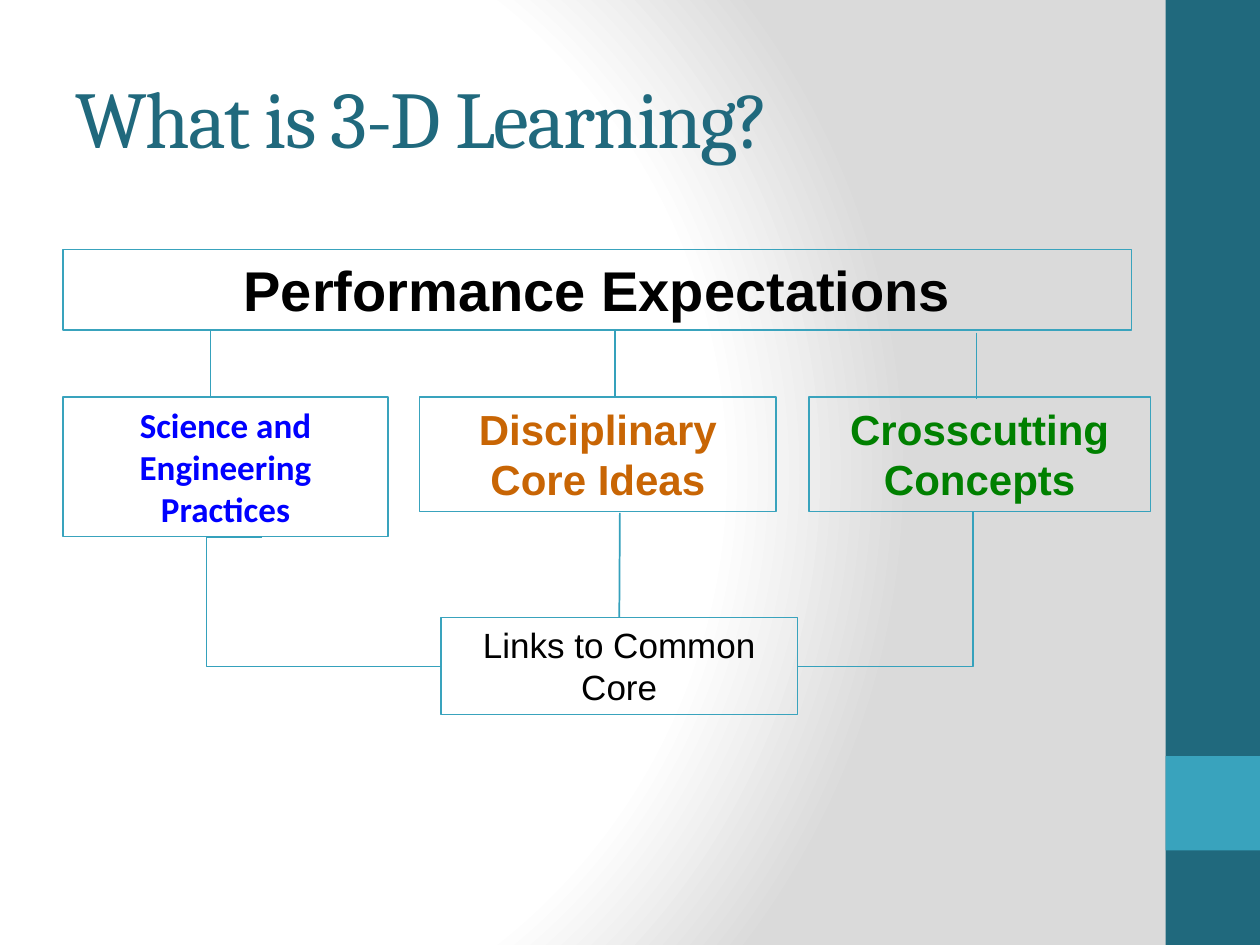
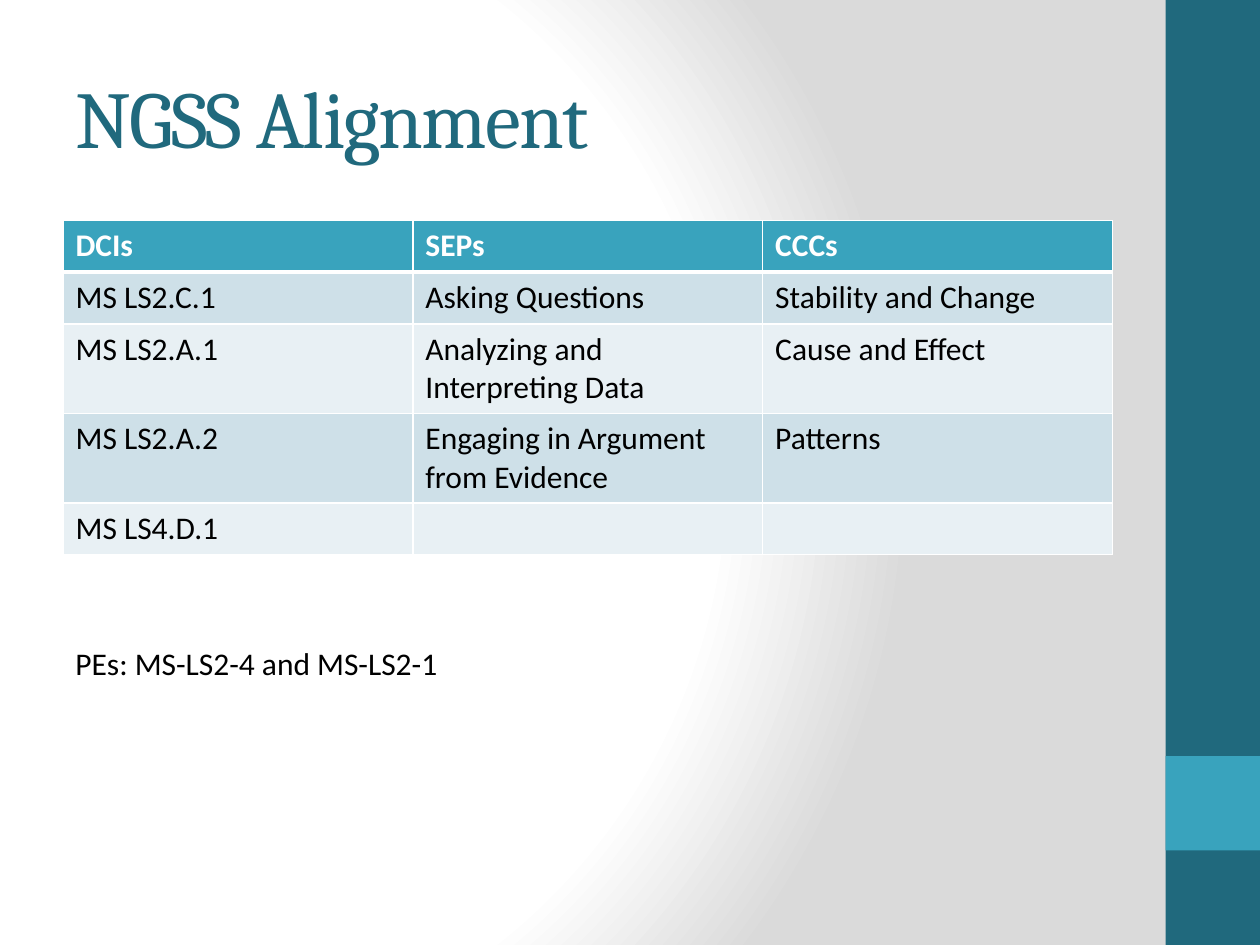
from lxml import etree
from pptx import Presentation
from pptx.dml.color import RGBColor
from pptx.enum.shapes import MSO_CONNECTOR, MSO_SHAPE
from pptx.enum.text import MSO_ANCHOR, PP_ALIGN
from pptx.oxml import parse_xml
from pptx.oxml.ns import nsdecls, qn
from pptx.util import Inches, Pt

COLORS = {
    "dark_teal": "20697D", "teal": "39A3BD", "connector": "35A1BC",
    "white": "FFFFFF", "gray": "DADADA", "black": "000000",
    "blue": "0000FF", "orange": "C86504", "green": "008000",
    "row_dark": "CEE0E8", "row_light": "E8F0F4",
}
SIDE_BANDS = [  # left, top, width, height, color
    (9.25, 0, 0.75, 7.5, "dark_teal"),
    (9.25, 6, 0.75, 0.75, "teal"),
]
TITLE_BOX = (0.5, 0.3, 8.33, 1.25)
TITLE_FORMAT = {"name": "Cambria", "size": 46, "color": "dark_teal", "bold": False}
BODY_FORMAT = {"name": "Calibri", "size": 18, "color": "black", "bold": False}
HEADER_FORMAT = {**BODY_FORMAT, "color": "white", "bold": True}

DIAGRAM_TITLE = "What is 3-D Learning?"
DIAGRAM_BOXES = {  # text: (box, format)
    "Performance Expectations": (
        (0.5, 1.98, 8.48, 0.64),
        {"name": "Arial", "size": 32, "color": "black", "bold": True}),
    "Science and Engineering Practices": (
        (0.5, 3.15, 2.58, 1.11),
        {"name": "Calibri", "size": 20, "color": "blue", "bold": True}),
    "Disciplinary Core Ideas": (
        (3.33, 3.15, 2.83, 0.91),
        {"name": "Arial", "size": 24, "color": "orange", "bold": True}),
    "Crosscutting Concepts": (
        (6.42, 3.15, 2.71, 0.91),
        {"name": "Arial", "size": 24, "color": "green", "bold": True}),
    "Links to Common Core": (
        (3.5, 4.9, 2.83, 0.77),
        {"name": "Arial", "size": 20, "color": "black", "bold": False}),
}
BRANCH_STARTS = [(1.67, 2.62), (4.88, 2.62), (7.75, 2.64)]
BRANCH_LENGTH = 0.53
PRACTICES_ELBOW = ((2.08, 4.26), (3.5, 5.29))
PRACTICES_BEND = -0.31
CONCEPTS_ELBOW = ((6.33, 5.29), (9.12, 4.06))
IDEAS_LINE = ((4.92, 4.07), (4.92, 4.9))

TABLE_TITLE = "NGSS Alignment"
ALIGNMENT_ROWS = [
    ("DCIs", "SEPs", "CCCs"),
    ("MS LS2.C.1", "Asking Questions", "Stability and Change"),
    ("MS LS2.A.1", "Analyzing and Interpreting Data", "Cause and Effect"),
    ("MS LS2.A.2", "Engaging in Argument from Evidence", "Patterns"),
    ("MS LS4.D.1", "", ""),
]
TABLE_LEFT, TABLE_TOP, TABLE_WIDTH, ROW_HEIGHT = 0.5, 1.75, 8.33, 0.41
EXPECTATIONS = "PEs: MS-LS2-4 and MS-LS2-1"
EXPECTATIONS_BOX = (0.5, 5.06, 8.33, 0.4)


def rgb(color):
    return RGBColor.from_string(COLORS[color])


def inches(values):
    return [Inches(value) for value in values]


def write(text_frame, text, text_format, alignment=PP_ALIGN.LEFT):
    text_frame.word_wrap = True
    paragraph = text_frame.paragraphs[0]
    paragraph.alignment = alignment
    run = paragraph.add_run()
    run.text = text
    values = {**text_format, "size": Pt(text_format["size"])}
    run.font.color.rgb = rgb(values.pop("color"))
    for attribute, value in values.items():
        setattr(run.font, attribute, value)
    return run


def add_rectangle(slide, box, fill=None, line=None):
    shape = slide.shapes.add_shape(MSO_SHAPE.RECTANGLE, *inches(box))
    shape.shadow.inherit = False
    if fill:
        shape.fill.solid()
        shape.fill.fore_color.rgb = rgb(fill)
    else:
        shape.fill.background()
    if line:
        shape.line.color.rgb = rgb(line)
        shape.line.width = Pt(0.75)
    else:
        shape.line.fill.background()
    return shape


def add_line(slide, start, end, kind=MSO_CONNECTOR.STRAIGHT):
    connector = slide.shapes.add_connector(kind, *inches(start + end))
    connector.line.color.rgb = rgb("connector")
    connector.line.width = Pt(1)
    etree.SubElement(connector.element.spPr, qn("a:effectLst"))
    return connector


def set_bend(connector, fraction):
    """Place the middle leg of an elbow at a fraction of its width."""
    guides = connector.element.spPr.find(qn("a:prstGeom")).find(qn("a:avLst"))
    etree.SubElement(guides, qn("a:gd"), name="adj1",
                     fmla=f"val {round(fraction * 100000)}")


def style_master(presentation, slide):
    """Give the master the radial background and the side bands."""
    master = presentation.slide_master
    master.background.fill.solid()
    properties = master.element.find(".//" + qn("p:bgPr"))
    stops = "".join(
        f'<a:gs pos="{position * 1000}"><a:srgbClr val="{COLORS[color]}"/></a:gs>'
        for position, color in [(0, "white"), (75, "white"), (100, "gray")])
    gradient = parse_xml(
        f'<a:gradFill {nsdecls("a")} rotWithShape="1"><a:gsLst>{stops}</a:gsLst>'
        '<a:path path="circle"><a:fillToRect l="20000" t="50000" r="100000" b="50000"/>'
        '</a:path></a:gradFill>')
    properties.replace(properties.find(qn("a:solidFill")), gradient)
    for index, (*box, color) in enumerate(SIDE_BANDS):
        band = add_rectangle(slide, box, fill=color)
        master.shapes.element.insert(2 + index, band.element)


def add_slide(presentation, title):
    slide = presentation.slides.add_slide(presentation.slide_layouts[5])
    shape = slide.shapes.title
    shape.left, shape.top, shape.width, shape.height = inches(TITLE_BOX)
    shape.text_frame.vertical_anchor = MSO_ANCHOR.MIDDLE
    run = write(shape.text_frame, title, TITLE_FORMAT)
    run.font._element.set("spc", "-100")
    return slide


def add_diagram(slide):
    boxes = {}
    for text, (box, text_format) in DIAGRAM_BOXES.items():
        shape = add_rectangle(slide, box, line="teal")
        shape.text_frame.vertical_anchor = MSO_ANCHOR.TOP
        write(shape.text_frame, text, text_format, PP_ALIGN.CENTER)
        boxes[text] = shape
    for left, top in BRANCH_STARTS:
        add_line(slide, (left, top), (left, top + BRANCH_LENGTH))
    set_bend(add_line(slide, *PRACTICES_ELBOW, MSO_CONNECTOR.ELBOW), PRACTICES_BEND)
    add_line(slide, *CONCEPTS_ELBOW, MSO_CONNECTOR.ELBOW)
    add_line(slide, *IDEAS_LINE).end_connect(boxes["Links to Common Core"], 0)


def set_borders(cell, widths):
    properties = cell._tc.get_or_add_tcPr()
    for index, (side, width) in enumerate(widths.items()):
        properties.insert(index, parse_xml(
            f'<a:ln{side} {nsdecls("a")} w="{Pt(width)}"><a:solidFill>'
            f'<a:srgbClr val="{COLORS["white"]}"/></a:solidFill></a:ln{side}>'))


def add_alignment_table(slide):
    row_count, column_count = len(ALIGNMENT_ROWS), len(ALIGNMENT_ROWS[0])
    frame = slide.shapes.add_table(row_count, column_count, *inches(
        (TABLE_LEFT, TABLE_TOP, TABLE_WIDTH, ROW_HEIGHT * row_count)))
    for row_index, texts in enumerate(ALIGNMENT_ROWS):
        if row_index == 0:
            fill, text_format = "teal", HEADER_FORMAT
        else:
            fill = "row_dark" if row_index % 2 else "row_light"
            text_format = BODY_FORMAT
        widths = {"L": 1, "R": 1, "T": 3 if row_index == 1 else 1,
                  "B": 3 if row_index == 0 else 1}
        for column_index, text in enumerate(texts):
            cell = frame.table.cell(row_index, column_index)
            cell.fill.solid()
            cell.fill.fore_color.rgb = rgb(fill)
            set_borders(cell, widths)
            if text:
                write(cell.text_frame, text, text_format)


def main():
    presentation = Presentation()
    presentation.slide_width, presentation.slide_height = Inches(10), Inches(7.5)

    diagram_slide = add_slide(presentation, DIAGRAM_TITLE)
    style_master(presentation, diagram_slide)
    add_diagram(diagram_slide)

    table_slide = add_slide(presentation, TABLE_TITLE)
    add_alignment_table(table_slide)
    text_box = table_slide.shapes.add_textbox(*inches(EXPECTATIONS_BOX))
    write(text_box.text_frame, EXPECTATIONS, BODY_FORMAT)

    presentation.save("out.pptx")


if __name__ == "__main__":
    main()
